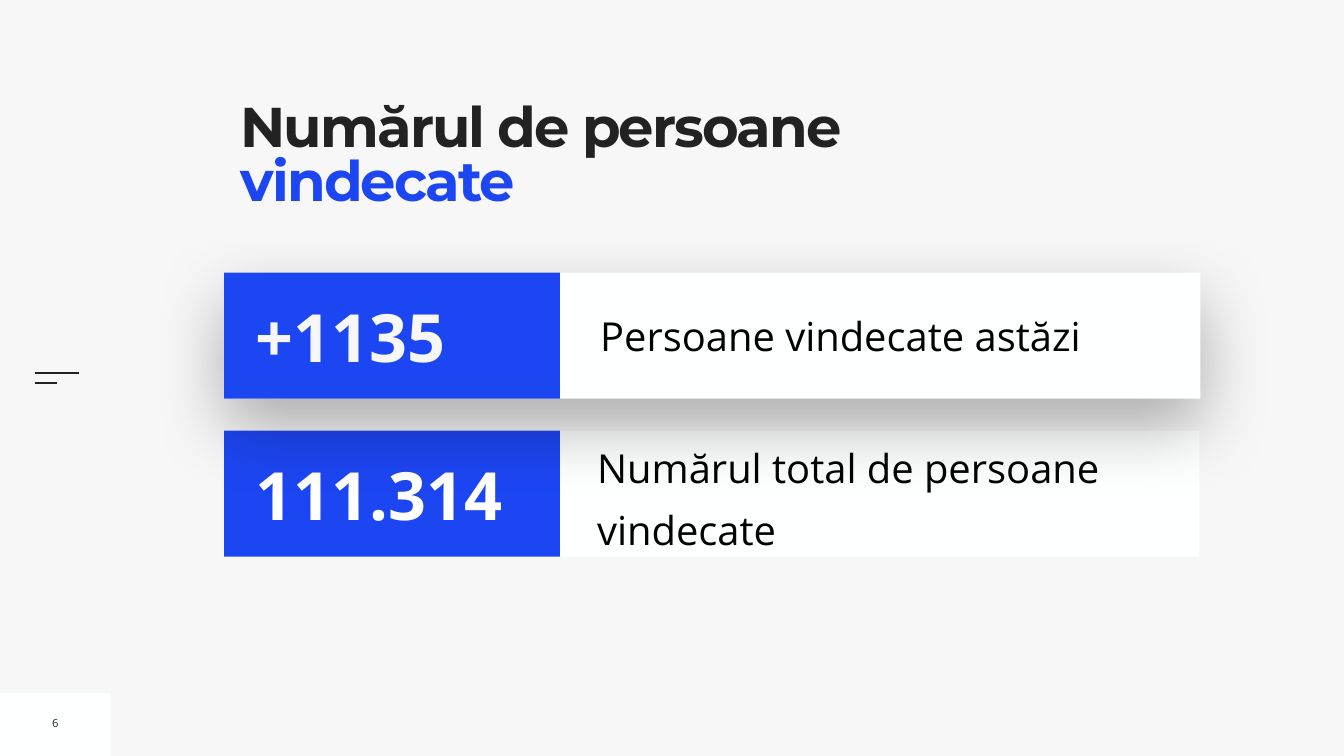
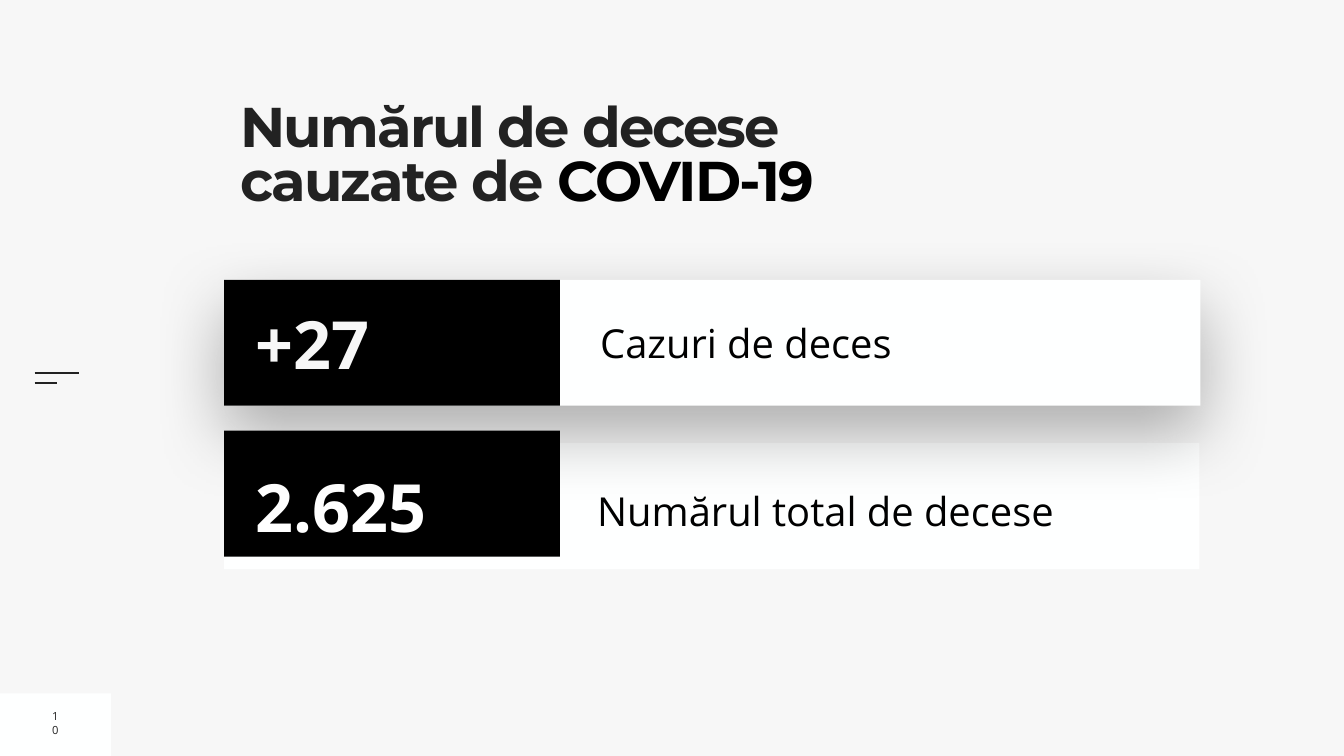
from lxml import etree
from pptx import Presentation
from pptx import util as u
from pptx.dml.color import RGBColor
from pptx.enum import shapes, text
from pptx.oxml.ns import qn

COLORS = {"page": "F7F7F7", "panel": "FEFFFF", "ink": "222222",
          "blue": "1D46F3", "black": "000000", "white": "FFFFFF"}

# Text formats: font values, then box values
TITLE = {"name": "Montserrat", "size": u.Pt(80), "bold": True}
FIGURE = {"name": "Open Sans", "size": u.Pt(95), "bold": True}
LABEL = {"name": "Open Sans", "size": u.Pt(57), "bold": False}
NUMBER = {"name": "Open Sans", "size": u.Pt(16), "bold": False}
MIDDLE = {"vertical_anchor": text.MSO_ANCHOR.MIDDLE,
          "auto_size": text.MSO_AUTO_SIZE.SHAPE_TO_FIT_TEXT}
TOP = {"vertical_anchor": text.MSO_ANCHOR.TOP}

# Row measures in cm
ROW_X, ROW_H, TILE_W = 11.3, 6.35, 16.92
FIGURE_X, FIGURE_W, FIGURE_H = 12.65, 15.32, 4.57


def rgb(key):
    return RGBColor.from_string(COLORS[key])


def set_all(obj, values):
    for key, value in values.items():
        setattr(obj, key, value)


def add_rect(parent, x, y, w, h, color):
    sp = parent.shapes.add_shape(shapes.MSO_SHAPE.RECTANGLE,
                                 *map(u.Cm, (x, y, w, h)))
    sp.shadow.inherit = False
    sp.fill.solid()
    sp.fill.fore_color.rgb = rgb(color)
    sp.line.fill.background()
    return sp


def add_soft_shadow(sp):
    effects = sp._element.spPr.find(qn("a:effectLst"))
    shadow = etree.SubElement(effects, qn("a:outerShdw"), {
        "blurRad": str(u.Pt(100)), "dist": str(u.Pt(40)),
        "dir": "5400000", "rotWithShape": "0"})
    color = etree.SubElement(shadow, qn("a:srgbClr"), val=COLORS["black"])
    etree.SubElement(color, qn("a:alpha"), val="30000")


def add_line(s, x1, x2, y):
    line = s.shapes.add_connector(shapes.MSO_CONNECTOR.STRAIGHT,
                                  *map(u.Cm, (x1, y, x2, y)))
    line.line.color.rgb = rgb("ink")
    line.line.width = u.Pt(3)
    etree.SubElement(line._element.spPr, qn("a:effectLst"))


def add_text(parent, box, runs, font, frame=MIDDLE, inset=0.25,
             paragraph=None, spacing=None):
    tf = parent.shapes.add_textbox(*map(u.Cm, box)).text_frame
    tf.word_wrap = True
    set_all(tf, frame)
    set_all(tf, {f"margin_{side}": u.Cm(inset)
                 for side in ("left", "top", "right", "bottom")})
    p = tf.paragraphs[0]
    set_all(p, paragraph or {})
    for words, color in runs:
        r = p.add_run()
        r.text = words
        set_all(r.font, font)
        r.font.color.rgb = rgb(color)
        if spacing:
            r._r.get_or_add_rPr().set("spc", str(spacing))


def add_base(prs, title, number):
    s = prs.slides.add_slide(prs.slide_layouts[6])
    s.background.fill.solid()
    s.background.fill.fore_color.rgb = rgb("page")
    # Page number corner and side mark
    add_rect(s, 0, 34.95, 5.59, 3.15, "panel")
    add_line(s, 1.75, 3.99, 18.82)
    add_line(s, 1.75, 2.87, 19.28)
    add_text(s, (12.12, 5.26, 33.05, 6.93), title, TITLE, TOP, 0,
             {"line_spacing": 0.8}, -270)
    add_text(s, (2.36, 35.79, 0.86, 1.3), [(number, "ink")], NUMBER,
             paragraph={"alignment": text.PP_ALIGN.CENTER})
    return s


def add_row(s, y, tile_y, width, color, figure, figure_color):
    """Panel with a coloured tile and a figure; returns the group."""
    row = s.shapes.add_group_shape()
    panel = add_rect(row, ROW_X, y, width, ROW_H, "panel")
    add_rect(row, ROW_X, tile_y, TILE_W, ROW_H, color)
    box = (FIGURE_X, y + (ROW_H - FIGURE_H) / 2, FIGURE_W, FIGURE_H)
    add_text(row, box, [(figure, figure_color)], FIGURE)
    return row, panel


def add_total_row(s, y, tile_y, color, figure, label, label_h):
    row, _ = add_row(s, y, tile_y, 49.15, color, figure, "white")
    label_y = y + (ROW_H - label_h) / 2 - 0.13
    add_text(row, (30.1, label_y, 30.35, label_h), [(label, "black")], LABEL,
             inset=0, paragraph={"line_spacing": 1.3, "space_before": u.Pt(20)})


def add_today_row(s, y, color, figure, label):
    row, panel = add_row(s, y, y, 49.2, color, figure, "page")
    add_soft_shadow(panel)
    label_h = 2.95
    add_text(row, (30, y + (ROW_H - label_h) / 2, 29.87, label_h),
             [(label, "black")], LABEL)


def main():
    prs = Presentation()
    prs.slide_width, prs.slide_height = u.Cm(67.74), u.Cm(38.1)

    # Recovered people
    s = add_base(prs, [("Numărul de persoane ", "ink"),
                       ("vindecate", "blue")], "6")
    add_total_row(s, 21.7, 21.7, "blue", "111.314",
                  "Numărul total de persoane vindecate", 6)
    add_today_row(s, 13.74, "blue", "+1135", "Persoane vindecate astăzi")

    # Deaths
    s = add_base(prs, [("Numărul de decese cauzate de ", "ink"),
                       ("COVID-19", "black")], "10")
    add_total_row(s, 22.33, 21.7, "black", "2.625",
                  "Numărul total de decese", 2.84)
    add_today_row(s, 14.1, "black", "+27", "Cazuri de deces")

    prs.save("out.pptx")


if __name__ == "__main__":
    main()
